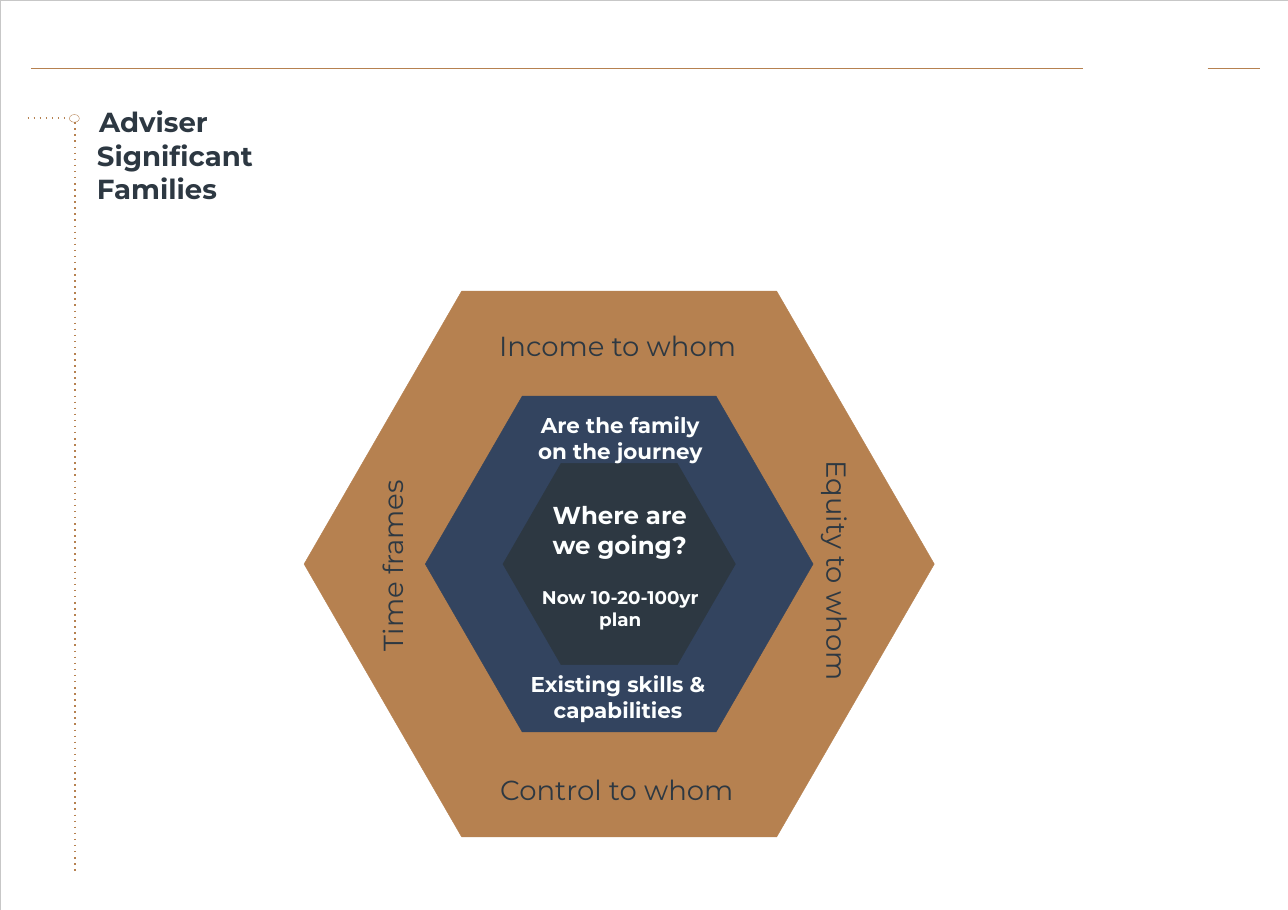
import math
from dataclasses import dataclass

import pptx
import pptx.dml.color
import pptx.enum.dml
import pptx.enum.shapes
import pptx.enum.text
import pptx.oxml
import pptx.oxml.ns
import pptx.slide
import pptx.text.text
import pptx.util
from pptx.util import Inches

FONT = "Montserrat"
COPPER, NAVY, SLATE, WHITE, GREY = "B68150", "33445F", "2D3842", "FDFFFF", "C7C7C7"
WIDTH, HEIGHT = 11.69, 8.26
CENTRE_X, CENTRE_Y = 5.62, 5.12


@dataclass
class Hexagon:
    width: float
    color: str


@dataclass
class Rule:
    x1: float
    y1: float
    x2: float
    y2: float
    dotted: bool = False


@dataclass
class Line:
    text: str
    size: float
    color: str = SLATE
    bold: bool = False
    space_before: float = 0
    indent: float = 0.01


@dataclass
class Label:
    left: float
    top: float
    width: float
    height: float
    lines: list[Line]
    align: pptx.enum.text.PP_ALIGN = pptx.enum.text.PP_ALIGN.LEFT
    direction: str = "horz"


HEXAGONS = [Hexagon(5.72, COPPER), Hexagon(3.52, NAVY), Hexagon(2.11, SLATE)]

RULES = [
    Rule(0.28, 0.62, 9.83, 0.62),
    Rule(10.96, 0.62, 11.44, 0.62),
    Rule(0.25, 1.07, 0.63, 1.07, dotted=True),
    Rule(0.68, 1.11, 0.68, 7.92, dotted=True),
]

TITLE = Label(0.87, 0.94, 2.45, 0.64, [
    Line("Adviser", 18, bold=True, space_before=1, indent=0.03),
    Line("Significant Families", 18, bold=True, space_before=0.7),
])

LABELS = [
    Label(7.45, 4.16, 0.3, 2.06, [Line("Equity to whom", 18, space_before=0.4)], direction="vert"),
    Label(4.52, 2.98, 2.21, 0.33, [Line("Income to whom", 18, space_before=1)]),
    Label(4.53, 7.01, 2.19, 0.33, [Line("Control to whom", 18, space_before=1)]),
    Label(3.41, 4.31, 0.3, 1.61, [Line("Time frames", 18, space_before=0.4)], direction="vert270"),
    Label(4.8, 3.73, 1.61, 2.91, [
        Line("Are the family", 14, WHITE, True, 1.1, 0.05),
        Line("on the journey", 14, WHITE, True, 0, 0.05),
        Line("Where are", 16, WHITE, True, 24, 0.04),
        Line("we going?", 16, WHITE, True, 0, 0.04),
        Line("Now 10-20-100yr", 12, WHITE, True, 18, 0.05),
        Line("plan", 12, WHITE, True, 0, 0.05),
        Line("Existing skills & capabilities", 14, WHITE, True, 26.5),
    ], pptx.enum.text.PP_ALIGN.CENTER),
]


def rgb(color: str) -> pptx.dml.color.RGBColor:
    return pptx.dml.color.RGBColor.from_string(color)


def add_outlined(slide: pptx.slide.Slide, kind: pptx.enum.shapes.MSO_SHAPE, left: float, top: float,
                 width: float, height: float, line: str, fill: str | None = None):
    shape = slide.shapes.add_shape(kind, Inches(left), Inches(top), Inches(width), Inches(height))
    shape.shadow.inherit = False
    if fill:
        shape.fill.solid()
        shape.fill.fore_color.rgb = rgb(fill)
    else:
        shape.fill.background()
    shape.line.color.rgb = rgb(line)
    shape.line.width = pptx.util.Pt(0.25)
    return shape


def add_hexagon(slide: pptx.slide.Slide, hexagon: Hexagon) -> None:
    """Draw a regular hexagon around the shared centre."""
    height = hexagon.width * math.sqrt(3) / 2
    shape = add_outlined(slide, pptx.enum.shapes.MSO_SHAPE.HEXAGON, CENTRE_X - hexagon.width / 2,
                         CENTRE_Y - height / 2, hexagon.width, height, hexagon.color, hexagon.color)
    shape.adjustments[0] = hexagon.width / 4 / height


def add_rule(slide: pptx.slide.Slide, rule: Rule) -> None:
    connector = slide.shapes.add_connector(
        pptx.enum.shapes.MSO_CONNECTOR.STRAIGHT,
        Inches(rule.x1), Inches(rule.y1), Inches(rule.x2), Inches(rule.y2))
    connector.line.color.rgb = rgb(COPPER)
    connector.line.width = pptx.util.Pt(1)
    connector.line.dash_style = pptx.enum.dml.MSO_LINE.SOLID
    properties = connector._element.spPr
    if rule.dotted:
        properties.find(".//" + pptx.oxml.ns.qn("a:prstDash")).set("val", "dot")
    properties.append(pptx.oxml.parse_xml(f"<a:effectLst {pptx.oxml.ns.nsdecls('a')}/>"))


def write(frame: pptx.text.text.TextFrame, label: Label) -> None:
    frame.word_wrap = True
    frame.auto_size = pptx.enum.text.MSO_AUTO_SIZE.NONE
    frame.vertical_anchor = pptx.enum.text.MSO_ANCHOR.TOP
    frame.margin_left = frame.margin_right = frame.margin_bottom = 0
    frame.margin_top = Inches(0.01)
    frame._txBody.bodyPr.set("vert", label.direction)
    frame.text = "\n".join(line.text for line in label.lines)
    for paragraph, line in zip(frame.paragraphs, label.lines):
        paragraph.alignment = label.align
        paragraph.space_before = pptx.util.Pt(line.space_before)
        properties = paragraph._p.get_or_add_pPr()
        properties.set("marL", str(Inches(line.indent)))
        properties.set("indent", "0")
        for run in paragraph.runs:
            run.font.name = FONT
            run.font.size = pptx.util.Pt(line.size)
            run.font.bold = line.bold
            run.font.color.rgb = rgb(line.color)


def add_label(slide: pptx.slide.Slide, label: Label) -> None:
    box = slide.shapes.add_textbox(Inches(label.left), Inches(label.top),
                                   Inches(label.width), Inches(label.height))
    write(box.text_frame, label)


def set_title(slide: pptx.slide.Slide, label: Label) -> None:
    title = slide.shapes.title
    title.left, title.top = Inches(label.left), Inches(label.top)
    title.width, title.height = Inches(label.width), Inches(label.height)
    write(title.text_frame, label)


def main() -> None:
    presentation = pptx.Presentation()
    presentation.slide_width, presentation.slide_height = Inches(WIDTH), Inches(HEIGHT)
    slide = presentation.slides.add_slide(presentation.slide_layouts[5])
    add_outlined(slide, pptx.enum.shapes.MSO_SHAPE.RECTANGLE, 0, 0, WIDTH, HEIGHT, GREY)
    for hexagon in HEXAGONS:
        add_hexagon(slide, hexagon)
    for rule in RULES:
        add_rule(slide, rule)
    add_outlined(slide, pptx.enum.shapes.MSO_SHAPE.OVAL, 0.63, 1.04, 0.09, 0.07, COPPER)
    set_title(slide, TITLE)
    for label in LABELS:
        add_label(slide, label)
    presentation.save("out.pptx")


if __name__ == "__main__":
    main()
